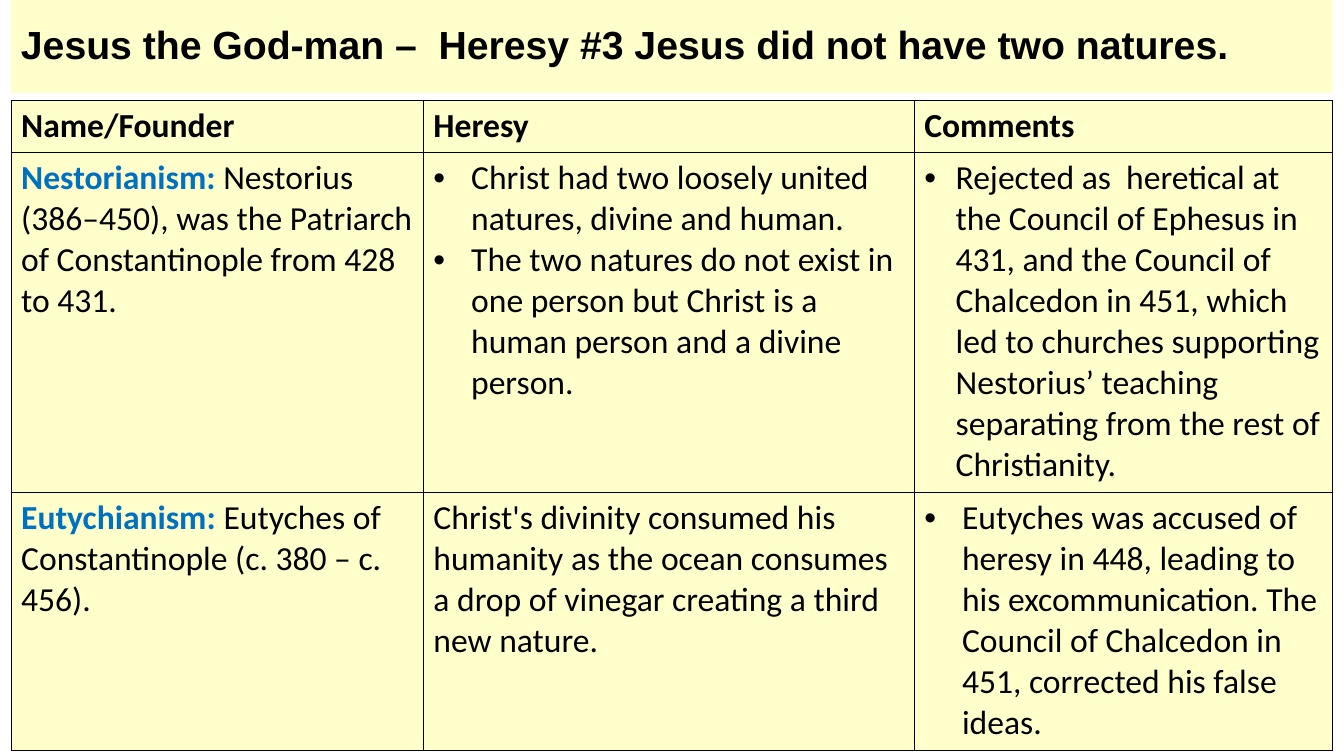
import pptx
import pptx.dml.color
import pptx.enum.shapes
import pptx.enum.text
import pptx.oxml.ns
import pptx.util
from lxml import etree

Cm = pptx.util.Cm
Pt = pptx.util.Pt
RGBColor = pptx.dml.color.RGBColor
qn = pptx.oxml.ns.qn

CREAM = RGBColor(0xFF, 0xFF, 0xCC)
BLACK = RGBColor(0x00, 0x00, 0x00)
BLUE = RGBColor(0x00, 0x70, 0xC0)

LEFT, WIDTH = Cm(0.28), Cm(33.3)
COLUMN_WIDTHS = [10.39, 12.37, 10.54]
ROW_HEIGHTS = [1.3, 8.58, 6.5]

# Each cell is (bullet indent in cm, paragraphs); each paragraph lists (text, colour, bold) runs
TABLE_ROWS = [
    [(0, [[(heading, BLACK, True)]]) for heading in ("Name/Founder", "Heresy", "Comments")],
    [
        (0, [[("Nestorianism: ", BLUE, True),
              ("Nestorius (386–450), was the Patriarch of Constantinople from 428 to 431.",
               BLACK, False)]]),
        (0.95, [[("Christ had two loosely united natures, divine and human.", BLACK, False)],
                [("The two natures do not exist in one person but Christ is a human person "
                  "and a divine person.", BLACK, False)]]),
        (0.79, [[("Rejected as  heretical at the Council of Ephesus in 431, and the "
                  "Council of Chalcedon in 451, which led to churches supporting Nestorius’ "
                  "teaching separating from the rest of Christianity.", BLACK, False)]]),
    ],
    [
        (0, [[("Eutychianism: ", BLUE, True),
              ("Eutyches of Constantinople (c. 380 – c. 456).", BLACK, False)]]),
        (0, [[("Christ's divinity consumed his humanity as the ocean consumes a drop of "
               "vinegar creating a third new nature.", BLACK, False)]]),
        (0.95, [[("Eutyches was accused of heresy in 448, leading to his excommunication. "
                  "The Council of Chalcedon in 451, corrected his false ideas.",
                  BLACK, False)]]),
    ],
]


def add_run(p, text, font, size, color, bold):
    r = p.add_run()
    r.text = text
    r.font.name = font
    r.font.size = Pt(size)
    r.font.color.rgb = color
    r.font.bold = bold


def set_bullet(p, indent):
    pPr = p._p.get_or_add_pPr()
    pPr.set("marL", str(Cm(indent)))
    pPr.set("indent", str(-Cm(indent)))
    etree.SubElement(pPr, qn("a:buFont"), typeface="Arial")
    etree.SubElement(pPr, qn("a:buChar"), char="•")


def set_borders(cell):
    tcPr = cell._tc.get_or_add_tcPr()
    for side in ("lnL", "lnR", "lnT", "lnB"):
        ln = etree.SubElement(tcPr, qn(f"a:{side}"), w=str(Pt(1)))
        fill = etree.SubElement(ln, qn("a:solidFill"))
        etree.SubElement(fill, qn("a:srgbClr"), val=str(BLACK))


def fill_cell(cell, indent, paragraphs):
    set_borders(cell)
    cell.fill.solid()
    cell.fill.fore_color.rgb = CREAM
    tf = cell.text_frame
    for i, runs in enumerate(paragraphs):
        p = tf.add_paragraph() if i else tf.paragraphs[0]
        if indent:
            set_bullet(p, indent)
        for text, color, bold in runs:
            add_run(p, text, "Calibri", 24, color, bold)


def add_title(s, text):
    sp = s.shapes.add_shape(pptx.enum.shapes.MSO_SHAPE.RECTANGLE, LEFT, 0, WIDTH, Cm(2.34))
    sp.shadow.inherit = False
    sp.fill.solid()
    sp.fill.fore_color.rgb = CREAM
    sp.line.fill.background()
    tf = sp.text_frame
    tf.word_wrap = True
    tf.vertical_anchor = pptx.enum.text.MSO_ANCHOR.MIDDLE
    p = tf.paragraphs[0]
    p.alignment = pptx.enum.text.PP_ALIGN.LEFT
    p.line_spacing = 0.9
    add_run(p, text, "Arial", 28, BLACK, True)


def add_heresy_table(s):
    table = s.shapes.add_table(len(ROW_HEIGHTS), len(COLUMN_WIDTHS), LEFT, Cm(2.54),
                               WIDTH, Cm(sum(ROW_HEIGHTS))).table
    for column, width in zip(table.columns, COLUMN_WIDTHS):
        column.width = Cm(width)
    for row, height, contents in zip(table.rows, ROW_HEIGHTS, TABLE_ROWS):
        row.height = Cm(height)
        for cell, (indent, paragraphs) in zip(row.cells, contents):
            fill_cell(cell, indent, paragraphs)


def main():
    prs = pptx.Presentation()
    prs.slide_width, prs.slide_height = Cm(33.87), Cm(19.05)
    s = prs.slides.add_slide(prs.slide_layouts[6])

    # Title band
    add_title(s, "Jesus the God-man –  Heresy #3 Jesus did not have two natures.")

    # Table of heresies
    add_heresy_table(s)

    prs.save("out.pptx")


if __name__ == "__main__":
    main()
